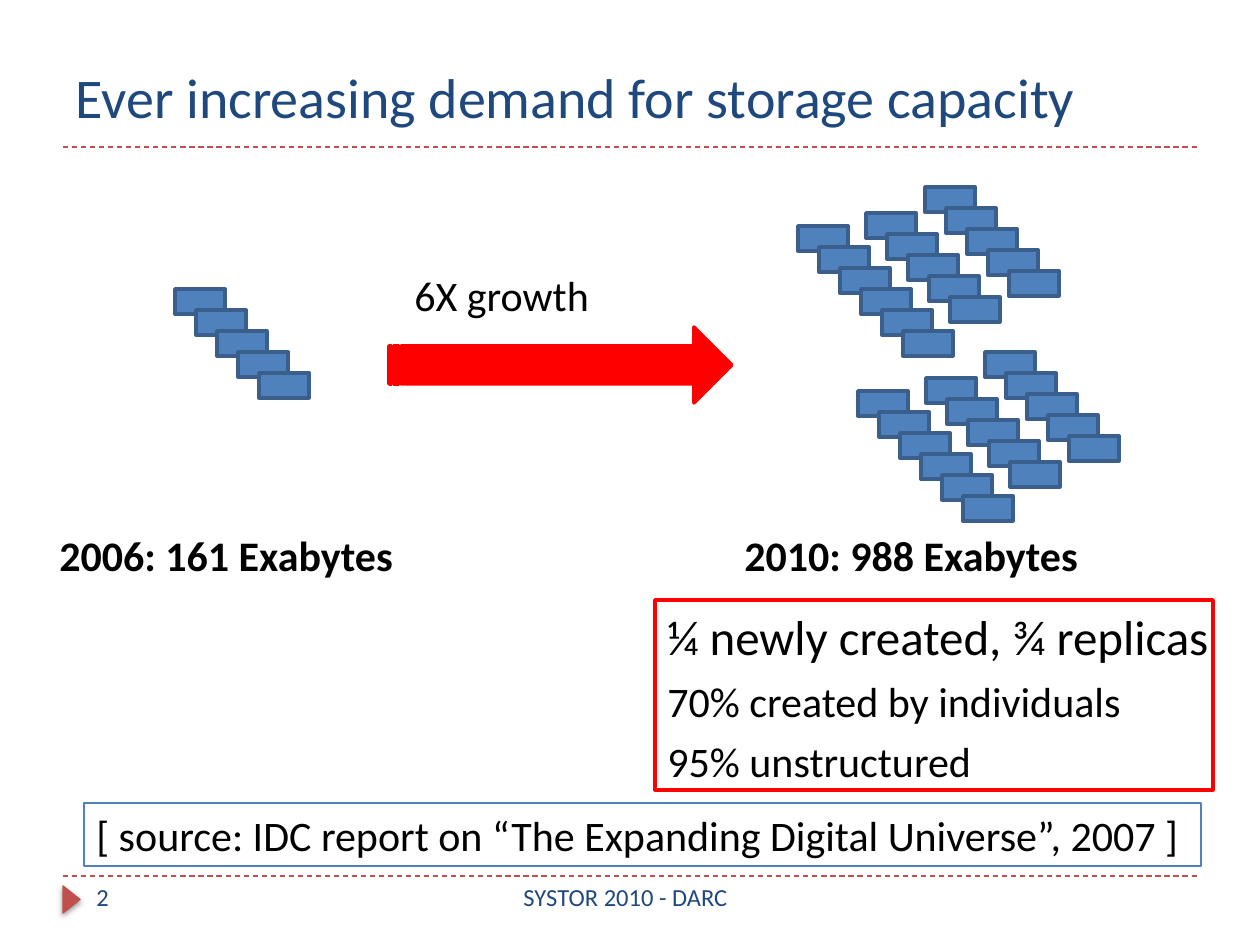
from lxml import etree
from pptx import Presentation
from pptx.dml.color import RGBColor
from pptx.enum.dml import MSO_LINE
from pptx.enum.shapes import MSO_CONNECTOR, MSO_SHAPE
from pptx.enum.text import MSO_ANCHOR, PP_ALIGN
from pptx.oxml import parse_xml
from pptx.oxml.ns import nsdecls, qn
from pptx.util import Emu, Pt

PX_PER_INCH = 126
W, H = 1260, 945
FONT = "Calibri"
COLORS = {
    "navy": "1F497D", "black": "000000", "blue": "4F81BD", "block_edge": "3A5F8C",
    "red": "FF0000", "brick": "C0504D", "brick_edge": "BF4C48",
}
BLOCK_W, BLOCK_H, STEP = 50, 25, 21
# Staircases in a large cluster: x offset, y offset, number of blocks
CLUSTER = [(0, 0, 6), (127, -39, 5), (68, -13, 5)]


def px(n):
    return Emu(round(n * 914400 / PX_PER_INCH))


def rgb(name):
    return RGBColor.from_string(COLORS[name])


def add_shape(shapes, kind, box, fill=None, line=None, weight=2):
    sp = shapes.add_shape(kind, *map(px, box))
    sp.shadow.inherit = False
    if fill:
        sp.fill.solid()
        sp.fill.fore_color.rgb = rgb(fill)
    else:
        sp.fill.background()
    if line:
        sp.line.color.rgb = rgb(line)
        sp.line.width = Pt(weight)
    else:
        sp.line.fill.background()
    return sp


def add_text(slide, box, lines, color="black", bold=None, align=PP_ALIGN.LEFT,
             anchor=MSO_ANCHOR.TOP, line=None, weight=2, hanging=0):
    """Place (text, size) lines in a box, outlined when line is given."""
    x, y, w, h = box
    if line:
        sp = add_shape(slide.shapes, MSO_SHAPE.RECTANGLE, box, line=line, weight=weight)
    else:
        sp = slide.shapes.add_textbox(px(x), px(y), px(w), px(h))
    tf = sp.text_frame
    tf.word_wrap = True
    tf.vertical_anchor = anchor
    if hanging:
        tf.margin_right = 0
    for i, (text, size) in enumerate(lines):
        p = tf.add_paragraph() if i else tf.paragraphs[0]
        p.text = text
        p.alignment = align
        if hanging:
            pPr = p._p.get_or_add_pPr()
            pPr.set("marL", str(px(hanging)))
            pPr.set("indent", str(-px(hanging)))
        if i:
            p.space_before = Pt(5.8)
        p.font.name = FONT
        p.font.size = Pt(size)
        p.font.bold = bold
        p.font.color.rgb = rgb(color)
    return sp


def add_rule(slide, x, y, w):
    cn = slide.shapes.add_connector(MSO_CONNECTOR.STRAIGHT, px(x), px(y), px(x + w), px(y))
    cn.line.color.rgb = rgb("brick")
    cn.line.width = Pt(0.75)
    cn.line.dash_style = MSO_LINE.DASH
    etree.SubElement(cn._element.spPr, qn("a:effectLst"))


def add_blocks(slide, x, y, stairs):
    """Group of block staircases running down to the right."""
    group = slide.shapes.add_group_shape()
    for dx, dy, count in stairs:
        for i in range(count):
            box = (x + dx + i * STEP, y + dy + i * STEP, BLOCK_W, BLOCK_H)
            add_shape(group.shapes, MSO_SHAPE.RECTANGLE, box, "blue", "block_edge")


def add_marker(slide, x, y, w, h):
    """Triangle pointing right, over a pale one that casts the shadow."""
    box = (x, y, w, h)
    base = add_shape(slide.shapes, MSO_SHAPE.ISOSCELES_TRIANGLE, box, "brick", "brick_edge", 0.75)
    spPr = base._element.spPr
    stops = "".join(
        f'<a:gs pos="{pos}"><a:srgbClr val="{color}"/></a:gs>'
        for pos, color in [(0, "FFA6A5"), (35000, "FFC0BF"), (100000, "FFE7E7")])
    spPr.replace(spPr.find(qn("a:solidFill")), parse_xml(
        f'<a:gradFill {nsdecls("a")}><a:gsLst>{stops}</a:gsLst>'
        '<a:lin ang="16200000"/></a:gradFill>'))
    spPr.find(qn("a:effectLst")).append(parse_xml(
        f'<a:outerShdw {nsdecls("a")} blurRad="{Pt(3.1)}" dist="{Pt(1.6)}" dir="5400000">'
        '<a:srgbClr val="000000"><a:alpha val="38000"/></a:srgbClr></a:outerShdw>'))
    front = add_shape(slide.shapes, MSO_SHAPE.ISOSCELES_TRIANGLE, box, "brick")
    base.rotation = front.rotation = 90


def header(slide, x, y, w, h):
    add_rule(slide, x, y + h + 11, w)
    add_text(slide, (x, y, w, h), [("Ever increasing demand for storage capacity", 32)],
             "navy", anchor=MSO_ANCHOR.BOTTOM)


def footer(slide, x, y, w, h):
    add_rule(slide, x, y, w)
    add_marker(slide, x - 5, y + 15, 27, 17)
    add_text(slide, (x + 21, y, 273, h), [("2", 14)], "navy")
    add_text(slide, (x + 305, y, 515, h), [("SYSTOR 2010 - DARC", 14)], "navy",
             align=PP_ALIGN.CENTER)


def growth(slide, x, y):
    # Data volumes before and after
    add_blocks(slide, x + 128, y + 102, [(0, 0, 5)])
    for dx, dy in [(751, 39), (811, 204)]:
        add_blocks(slide, x + dx, y + dy, CLUSTER)
    for dx, label in [(0, "2006: 161 Exabytes"), (685, "2010: 988 Exabytes")]:
        add_text(slide, (x + dx, y + 336, 393, 63), [(label, 24)], bold=True, hanging=71)

    # Growth arrow
    add_shape(slide.shapes, MSO_SHAPE.STRIPED_RIGHT_ARROW, (x + 342, y + 140, 343, 76),
              "red", "red")
    add_text(slide, (x + 355, y + 76, 266, 63), [("6X growth", 24)], hanging=71)


def details(slide, x, y, w, h):
    add_text(slide, (x, y, w, h), [
        ("¼ newly created, ¾ replicas", 28),
        ("70% created by individuals", 24),
        ("95% unstructured", 24),
    ], line="red", hanging=71)


def source(slide, x, y, w, h):
    add_text(slide, (x, y, w, h),
             [("[ source: IDC report on “The Expanding Digital Universe”, 2007 ]", 24)],
             line="blue", weight=1.5, hanging=71)


def main():
    prs = Presentation()
    prs.slide_width, prs.slide_height = px(W), px(H)
    s = prs.slides.add_slide(prs.slide_layouts[6])
    header(s, 63, 32, 1134, 104)
    footer(s, 63, 876, 1134, 50)
    source(s, 84, 803, 1117, 63)
    growth(s, 47, 187)
    details(s, 655, 600, 558, 190)
    prs.save("out.pptx")


if __name__ == "__main__":
    main()
